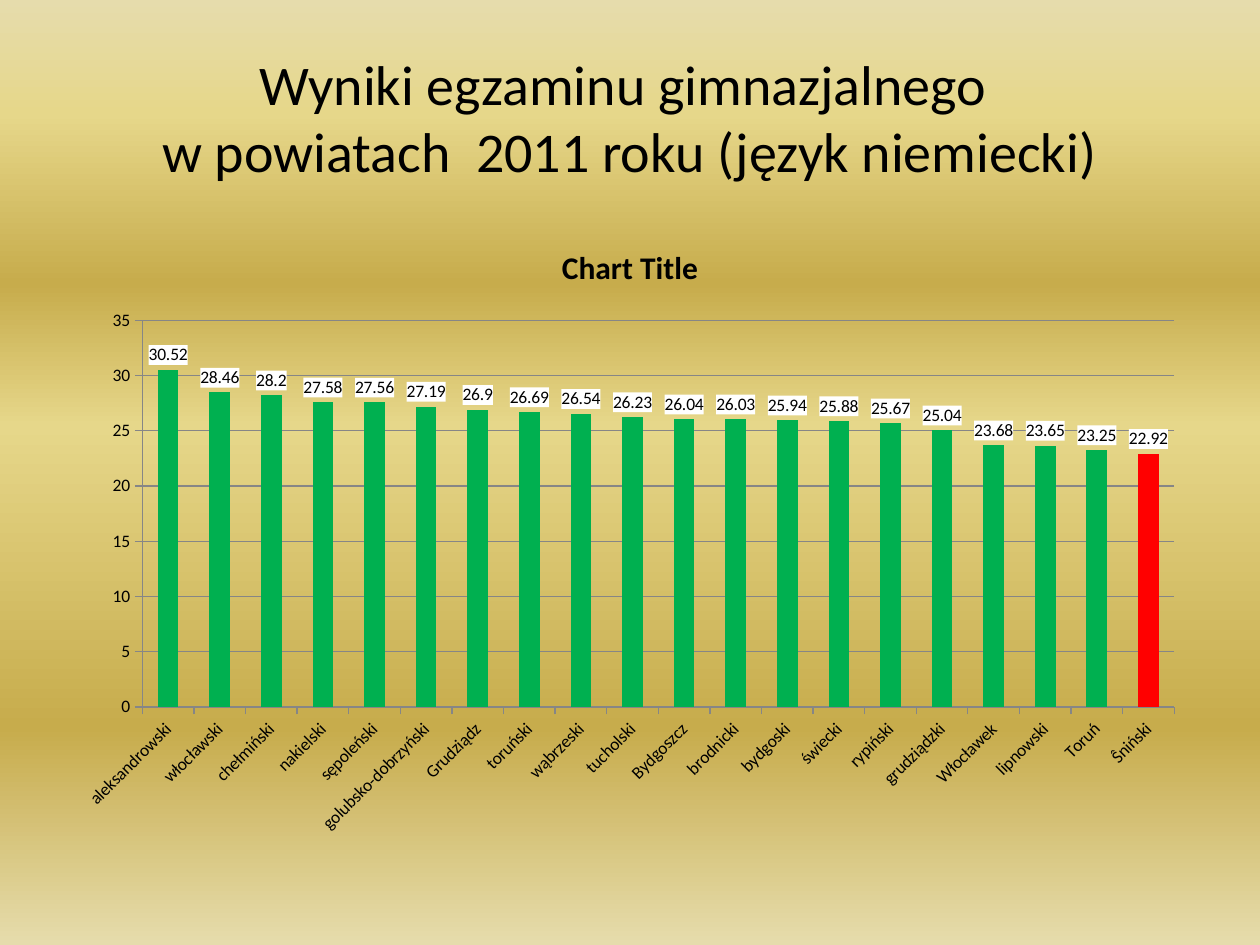
from lxml import etree
from pptx import Presentation
from pptx.chart.data import CategoryChartData as ChartData
from pptx.dml.color import RGBColor as RGB
from pptx.enum.chart import XL_CHART_TYPE as Kind, XL_LABEL_POSITION as Spot
from pptx.enum.chart import XL_TICK_MARK as Tick
from pptx.enum.text import MSO_ANCHOR as Anchor, PP_ALIGN as Align
from pptx.oxml import parse_xml
from pptx.oxml.ns import nsdecls, qn
from pptx.util import Inches, Pt

FONT = "Calibri"
BLACK = RGB(0x00, 0x00, 0x00)
GREEN = RGB(0x00, 0xB0, 0x50)
RED = RGB(0xFF, 0x00, 0x00)
WHITE = RGB(0xFF, 0xFF, 0xFF)
GREY = RGB(0x86, 0x86, 0x86)
PALE = RGB(0xE6, 0xDC, 0xAC)
SAND = RGB(0xE6, 0xD7, 0x8A)
GOLD = RGB(0xC7, 0xAC, 0x4C)

STOPS = [(0, PALE), (12, SAND), (30, GOLD), (45, SAND), (77, GOLD), (100, PALE)]
TITLE = "Wyniki egzaminu gimnazjalnego \vw powiatach  2011 roku (język niemiecki)"
SCORES = {
    "aleksandrowski": 30.52, "włocławski": 28.46, "chełmiński": 28.2,
    "nakielski": 27.58, "sępoleński": 27.56, "golubsko-dobrzyński": 27.19,
    "Grudziądz": 26.9, "toruński": 26.69, "wąbrzeski": 26.54,
    "tucholski": 26.23, "Bydgoszcz": 26.04, "brodnicki": 26.03,
    "bydgoski": 25.94, "świecki": 25.88, "rypiński": 25.67,
    "grudziądzki": 25.04, "Włocławek": 23.68, "lipnowski": 23.65,
    "Toruń": 23.25, "Ŝniński": 22.92,
}
MARKED = "Ŝniński"


def set_font(font, size, bold=False):
    font.name, font.size, font.bold = FONT, Pt(size), bold
    font.color.rgb = BLACK


def paint_back(slide):
    fill = slide.background.fill
    fill.gradient()
    grad = slide.background._cSld.find(".//" + qn("a:gradFill"))
    stops = grad.find(qn("a:gsLst"))
    stops.clear()
    for pos, color in STOPS:
        stop = etree.SubElement(stops, qn("a:gs"), pos=str(pos * 1000))
        etree.SubElement(stop, qn("a:srgbClr"), val=str(color))
    grad.find(qn("a:lin")).set("ang", str(90 * 60000))


def place_title(slide, box):
    title = slide.shapes.title
    title.left, title.top, title.width, title.height = box
    frame = title.text_frame
    frame.text = TITLE
    frame.vertical_anchor = Anchor.MIDDLE
    para = frame.paragraphs[0]
    para.alignment = Align.CENTER
    set_font(para.font, 32)


def style_axes(chart):
    cat, val = chart.category_axis, chart.value_axis
    for axis in (cat, val):
        axis.major_tick_mark = Tick.OUTSIDE
        axis.minor_tick_mark = Tick.NONE
        axis.format.line.color.rgb = GREY
        set_font(axis.tick_labels.font, 10)
    body = cat._element.find(qn("c:txPr")).find(qn("a:bodyPr"))
    body.set("rot", str(-45 * 60000))
    val.minimum_scale, val.maximum_scale, val.major_unit = 0, 35, 5
    val.has_major_gridlines = True
    val.major_gridlines.format.line.color.rgb = GREY


def style_labels(series):
    labels = series.data_labels
    labels.show_value = True
    labels.position = Spot.OUTSIDE_END
    set_font(labels.font, 10)
    text = labels._element.find(qn("c:txPr"))
    text.addprevious(parse_xml(
        f'<c:spPr {nsdecls("c", "a")}><a:solidFill><a:srgbClr val="{WHITE}"/>'
        '</a:solidFill></c:spPr>'))


def fix_plot(chart, **parts):
    """Pin the inner plot area, in fractions of the chart."""
    area = chart._chartSpace.find(".//" + qn("c:plotArea"))
    for old in area.findall(qn("c:layout")):
        area.remove(old)
    layout = etree.Element(qn("c:layout"))
    manual = etree.SubElement(layout, qn("c:manualLayout"))
    rows = {"layoutTarget": "inner", "xMode": "edge", "yMode": "edge", **parts}
    for tag, val in rows.items():
        etree.SubElement(manual, qn("c:" + tag), val=str(val))
    area.insert(0, layout)


def place_chart(slide, box):
    data = ChartData()
    data.categories = list(SCORES)
    data.add_series("Series 1", list(SCORES.values()))
    chart = slide.shapes.add_chart(Kind.COLUMN_CLUSTERED, *box, data).chart
    set_font(chart.font, 10)
    chart.has_legend = False
    chart.has_title = True
    head = chart.chart_title.text_frame
    head.text = "Chart Title"
    set_font(head.paragraphs[0].font, 18, bold=True)

    plot = chart.plots[0]
    plot.gap_width = 150
    plot.vary_by_categories = False
    series = plot.series[0]
    series.invert_if_negative = False
    series.format.fill.solid()
    series.format.fill.fore_color.rgb = GREEN
    point = series.points[list(SCORES).index(MARKED)].format.fill
    point.solid()
    point.fore_color.rgb = RED

    style_labels(series)
    style_axes(chart)
    fix_plot(chart, x=0.07, y=0.16, w=0.91, h=0.62)


def main():
    deck = Presentation()
    deck.slide_width, deck.slide_height = Inches(10), Inches(7.5)
    slide = deck.slides.add_slide(deck.slide_layouts[5])
    paint_back(slide)
    place_title(slide, [Inches(n) for n in (0.5, 0.3, 9, 1.25)])
    place_chart(slide, [Inches(n) for n in (0.5, 1.75, 9, 4.95)])
    deck.save("out.pptx")


if __name__ == "__main__":
    main()
